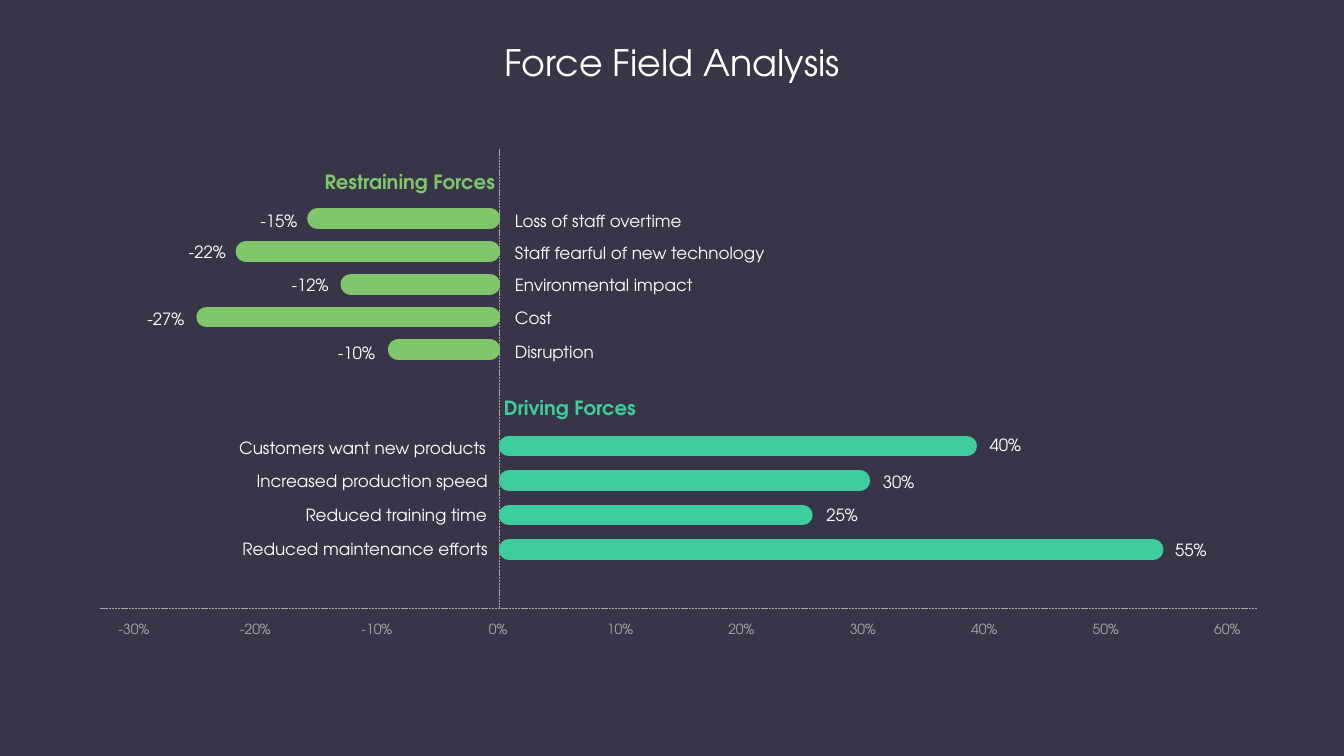
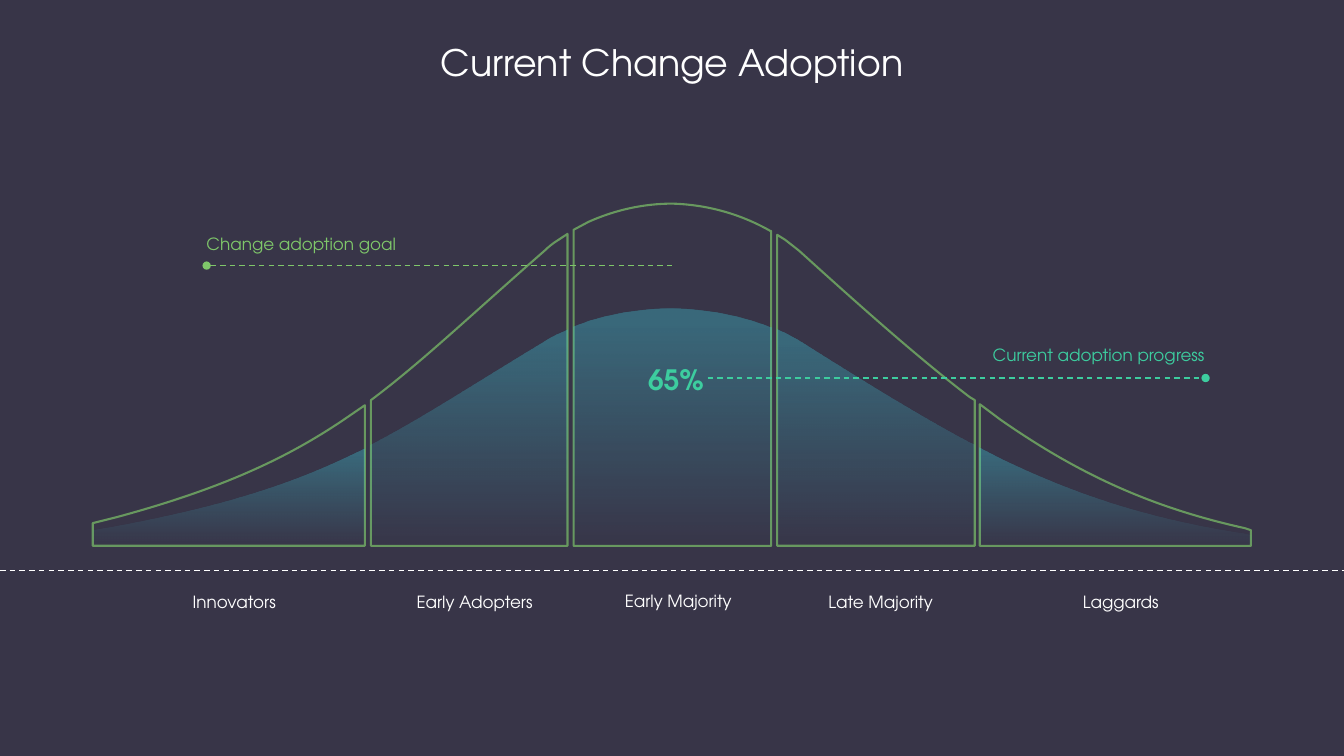
"""Build two change management slides: a force field analysis and an adoption curve."""
from lxml.etree import SubElement
from pptx import Presentation
from pptx.dml.color import RGBColor
from pptx.enum.dml import MSO_LINE_DASH_STYLE as Dash
from pptx.enum.text import MSO_AUTO_SIZE as AutoSize, PP_ALIGN as Align
from pptx.oxml.ns import qn
from pptx.util import Inches, Pt

COLORS = {
    "background": "383548",
    "text": "FFFFFF",
    "axis": "A6A6A6",
    "green": "7FC76A",
    "teal": "3DCD9F",
    "progress": "3DCADA",
}
FONT = "TeX Gyre Adventor"
LEFT, CENTER, RIGHT = Align.LEFT, Align.CENTER, Align.RIGHT

presentation = Presentation()
presentation.slide_width, presentation.slide_height = Inches(40 / 3), Inches(7.5)
COLUMN = presentation.slide_width / 133.33
ROW = presentation.slide_height / 75


def add_text(slide, text, left, top, columns, align=LEFT, color="text", size=12, bold=False,
             wrap=False):
    """Place one line of text in a box given in grid columns and rows."""
    rows = 0.17 * size + 1
    box = slide.shapes.add_textbox(
        round(left * COLUMN), round(top * ROW), round(columns * COLUMN), round(rows * ROW))
    frame = box.text_frame
    for name, value in {"word_wrap": wrap, "auto_size": AutoSize.SHAPE_TO_FIT_TEXT}.items():
        setattr(frame, name, value)
    paragraph = frame.paragraphs[0]
    paragraph.text, paragraph.alignment = text, align
    font = paragraph.runs[0].font
    for name, value in {"name": FONT, "size": Pt(size), "bold": bold}.items():
        setattr(font, name, value)
    font.color.rgb = RGBColor.from_string(COLORS[color])


def add_line(slide, start, end, color, width, dash=None, cap="flat", dot=None):
    """Draw a straight line between two grid points."""
    (x1, y1), (x2, y2) = start, end
    connector = slide.shapes.add_connector(
        1, round(x1 * COLUMN), round(y1 * ROW), round(x2 * COLUMN), round(y2 * ROW))
    connector.line.color.rgb = RGBColor.from_string(COLORS[color])
    for name, value in {"width": Pt(width), "dash_style": dash}.items():
        setattr(connector.line, name, value)
    properties = connector.element.spPr
    outline = properties.find(qn("a:ln"))
    outline.set("cap", cap)
    if dot:
        SubElement(outline, qn(dot), type="oval")
    SubElement(properties, qn("a:effectLst"))


slides = []
for title, left, columns in (("Force Field Analysis", 48.8, 35.8),
                             ("Current Change Adoption", 42.4, 48.6)):
    slide = presentation.slides.add_slide(presentation.slide_layouts[6])
    slide.background.fill.solid()
    slide.background.fill.fore_color.rgb = RGBColor.from_string(COLORS["background"])
    add_text(slide, title, left, 3.5, columns, CENTER, size=26)
    slides.append(slide)
force_slide, adoption_slide = slides

for start, end in (((49.55, 60.3), (49.55, 14.7)), ((124.7, 60.35), (9.9, 60.35))):
    add_line(force_slide, start, end, "axis", 0.5, Dash.SQUARE_DOT)
for index, percent in enumerate(range(-30, 70, 10)):
    columns = 5.1 if percent < 0 else 4.6 if percent else 3.9
    center = 13.32 + 12.05 * index
    add_text(force_slide, f"{percent}%", center - columns / 2, 61.05, columns, color="axis", size=10)

force_groups = [
    {
        "heading": ("Restraining Forces", 30.9, 16.4, 19.2), "color": "green",
        "root": 48.6, "first_row": 21.7, "row_step": 3.25,
        "value_align": RIGHT, "name_align": LEFT, "wrap": False,
        "bars": [
            ("Loss of staff overtime", (50.1, 20.4, 18.9), -15, (24.8, 20.4), 31.5),
            ("Staff fearful of new technology", (50.1, 23.6, 27.2), -22, (17.7, 23.5), 24.4),
            ("Environmental impact", (50.1, 26.8, 20), -12, (27.9, 26.8), 34.8),
            ("Cost", (50.1, 30, 5.7), -27, (13.6, 30.1), 20.5),
            ("Disruption", (50.1, 33.4, 10), -10, (32.5, 33.5), 39.5),
        ],
    },
    {
        "heading": ("Driving Forces", 49, 38.8, 15.3), "color": "teal",
        "root": 50.5, "first_row": 44.25, "row_step": 3.43,
        "value_align": LEFT, "name_align": RIGHT, "wrap": True,
        "bars": [
            ("Customers want new products", (22.3, 42.9, 26.9), 40, (97.2, 42.6), 95.9),
            ("Increased production speed", (24.1, 46.2, 25.3), 30, (86.6, 46.3), 85.3),
            ("Reduced training time", (29, 49.6, 20.3), 25, (81, 49.6), 79.6),
            ("Reduced maintenance efforts", (22.7, 53, 26.7), 55, (115.6, 53.1), 114.4),
        ],
    },
]
for group in force_groups:
    add_text(force_slide, *group["heading"], group["value_align"], group["color"], 14, True)
    for index, (name, name_box, percent, value_corner, tip) in enumerate(group["bars"]):
        row = group["first_row"] + group["row_step"] * index
        add_line(force_slide, (group["root"], row), (tip, row), group["color"], 14.75, cap="rnd")
        add_text(force_slide, f"{percent}%", *value_corner, 5.7, group["value_align"],
                 wrap=group["wrap"])
        add_text(force_slide, name, *name_box, group["name_align"])

BASE = 54.15
PROGRESS_SHARE = 23.6 / 34
adopter_segments = [
    ("Innovators", (16.9, 58.2, 12.7, CENTER), (9.2, 51.9), [
        [(11.6, 51.3)],
        [(22.3, 48.4), (28.8, 45.3), (34.6, 41.3)],
        [(36.2, 40.2)],
    ]),
    ("Early Adopters", (38.8, 58.2, 16.6, CENTER), (36.8, 39.7), [
        [(37.2, 39.4)],
        [(42.2, 35.6), (47, 31), (54, 24.9)],
        [(54.4, 24.5), (54.9, 24.1), (55.4, 23.8)],
        [(56.3, 23.2)],
    ]),
    ("Early Majority", (58.9, 58.1, 16.8, CENTER), (56.9, 22.8), [
        [(58.4, 22)],
        [(61.1, 20.8), (63.9, 20.2), (66.7, 20.2)],
        [(70.1, 20.3), (73.4, 21.2), (76.4, 22.9)],
        [(76.5, 22.9)],
    ]),
    ("Late Majority", (81.2, 58.2, 15.5, LEFT), (77.1, 23.3), [
        [(77.9, 23.8)],
        [(78.4, 24.2), (78.8, 24.5), (79.3, 24.9)],
        [(85.7, 30.7), (91.1, 35.5), (96.2, 39.4)],
        [(96.7, 39.7)],
    ]),
    ("Laggards", (105.4, 58.2, 11.6, CENTER), (97.2, 40.1), [
        [(99.2, 41.6)],
        [(106.8, 46.9), (114, 50.3), (123.5, 52.4)],
        [(124.1, 52.6)],
    ]),
]
for height_share in (1, PROGRESS_SHARE):
    for name, label_box, start, crest in adopter_segments:
        outline_pieces = [[start], *crest, [(crest[-1][-1][0], BASE)], [(start[0], BASE)]]
        pieces = [[(round(x * COLUMN), round((BASE - (BASE - y) * height_share) * ROW))
                   for x, y in piece] for piece in outline_pieces]
        ends = [piece[-1] for piece in pieces]
        builder = adoption_slide.shapes.build_freeform(*ends[0])
        builder.add_line_segments(ends[1:], close=True)
        shape = builder.convert_to_shape()
        shape.shadow.inherit = False
        properties = shape.element.spPr
        segments = list(properties.iter(qn("a:lnTo")))
        for segment, piece in zip(segments, pieces[1:]):
            if len(piece) == 3:
                segment.tag = qn("a:cubicBezTo")
                for position, (x, y) in enumerate(piece[:2]):
                    control = SubElement(segment, qn("a:pt"), x=str(x - shape.left),
                                         y=str(y - shape.top))
                    segment.insert(position, control)
        if height_share == 1:
            shape.fill.solid()
            shape.fill.fore_color.rgb = RGBColor.from_string(COLORS["background"])
            shape.line.color.rgb = RGBColor.from_string(COLORS["green"])
            shape.line.width = Pt(1.5)
            faded, opacities = properties.find(qn("a:ln")), [67]
        else:
            shape.fill.gradient()
            shape.fill.gradient_angle = 270
            for stop, position in zip(shape.fill.gradient_stops, (0.07, 1)):
                stop.color.rgb = RGBColor.from_string(COLORS["progress"])
                stop.position = position
            shape.line.fill.background()
            faded, opacities = properties.find(qn("a:gradFill")), [34, 0]
        for color, opacity in zip(faded.iter(qn("a:srgbClr")), opacities):
            SubElement(color, qn("a:alpha"), val=str(opacity * 1000))

add_line(adoption_slide, (0, 56.6), (133.33, 56.6), "text", 1, Dash.DASH)
for name, label_box, start, crest in adopter_segments:
    add_text(adoption_slide, name, *label_box, wrap=True)

callouts = [
    ("Change adoption goal", (19.5, 22.7, 22.9), LEFT, "green",
     (20.5, 26.35), (66.7, 26.35), "a:headEnd"),
    ("Current adoption progress", (96.9, 33.7, 23.6), RIGHT, "teal",
     (70.2, 37.5), (119.6, 37.5), "a:tailEnd"),
]
for text, box, align, color, start, end, dot in callouts:
    add_line(adoption_slide, start, end, color, 1, Dash.DASH, dot=dot)
    add_text(adoption_slide, text, *box, align, color, wrap=True)
add_text(adoption_slide, "65%", 62.1, 35.45, 8.7, RIGHT, "teal", 20, True, True)

presentation.save("out.pptx")
